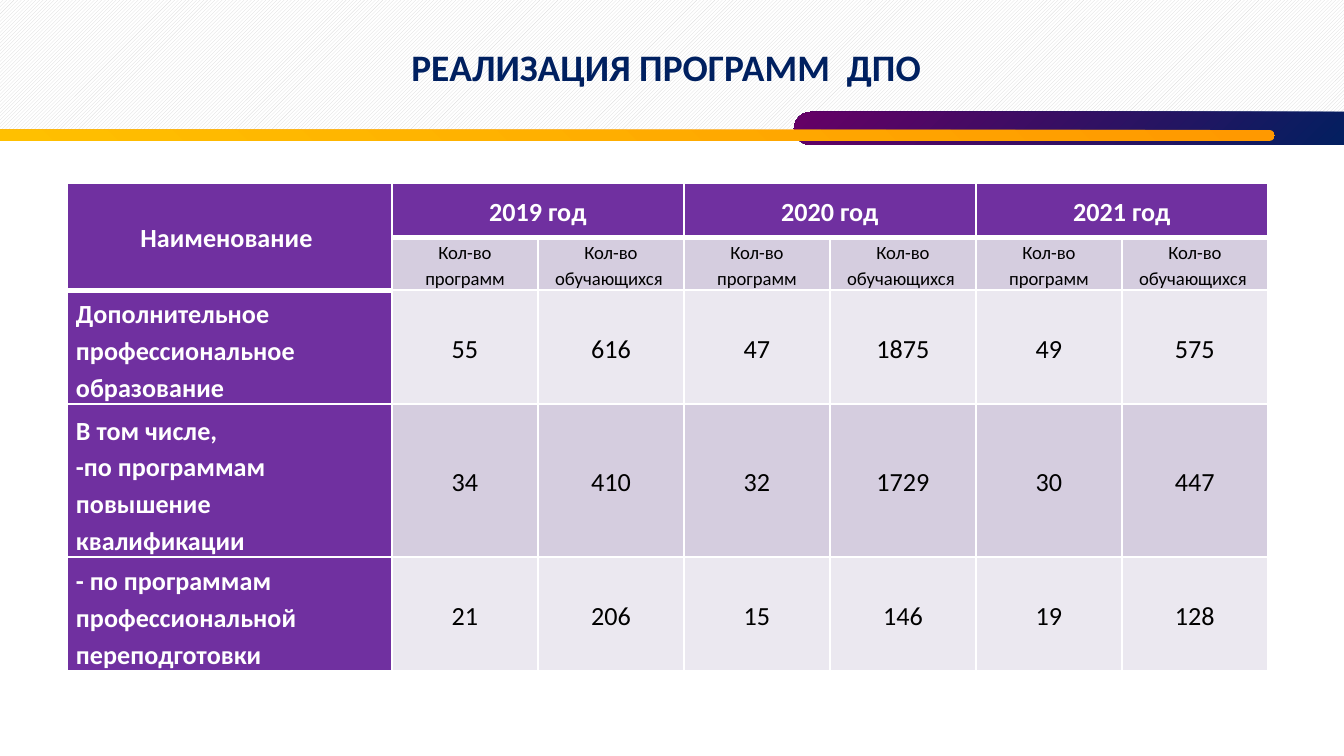
from lxml import etree
from pptx import Presentation
from pptx import util as u
from pptx.dml.color import RGBColor
from pptx.enum import dml, shapes, text
from pptx.oxml.ns import qn

W, H = 1344, 756
EMU_PER_PX = 9144000 / W

WHITE = RGBColor(0xFF, 0xFF, 0xFF)
BLACK = RGBColor(0x00, 0x00, 0x00)
HATCH = RGBColor(0xD9, 0xD9, 0xD9)
NAVY = RGBColor(0x00, 0x20, 0x60)
PLUM = RGBColor(0x66, 0x00, 0x66)
ORANGE = RGBColor(0xFF, 0x99, 0x00)
AMBER = RGBColor(0xFF, 0xC0, 0x00)
PURPLE = RGBColor(0x70, 0x30, 0xA0)
LILAC = RGBColor(0xD5, 0xCD, 0xDF)
PALE = RGBColor(0xEB, 0xE8, 0xF0)

FONT = "Calibri"
CENTER, LEFT = text.PP_ALIGN.CENTER, text.PP_ALIGN.LEFT
MIDDLE, BOTTOM = text.MSO_ANCHOR.MIDDLE, text.MSO_ANCHOR.BOTTOM

YEARS = ["2019 год", "2020 год", "2021 год"]
MEASURES = ["Кол-во программ", "Кол-во обучающихся "]
PROGRAMS = [
    (["Дополнительное профессиональное образование"],
     [55, 616, 47, 1875, 49, 575]),
    (["В том числе,", "-по программам повышение квалификации"],
     [34, 410, 32, 1729, 30, 447]),
    (["- по программам профессиональной переподготовки"],
     [21, 206, 15, 146, 19, 128]),
]
NAME_WIDTH, VALUE_WIDTH = 325, 146
ROW_HEIGHTS = [55, 51, 114, 153, 114]


def px(n):
    return u.Emu(round(n * EMU_PER_PX))


def add_run(p, words, size, color, bold):
    r = p.add_run()
    r.text = words
    r.font.name, r.font.size, r.font.bold = FONT, u.Pt(size), bold
    r.font.color.rgb = color


def add_plain_shape(s, kind, box):
    sp = s.shapes.add_shape(kind, *map(px, box))
    sp.shadow.inherit = False
    sp.line.fill.background()
    return sp


def add_bar(s, box, start, end):
    """Fully rounded bar with a diagonal gradient."""
    sp = add_plain_shape(s, shapes.MSO_SHAPE.ROUNDED_RECTANGLE, box)
    sp.adjustments[0] = 0.5
    sp.fill.gradient()
    sp.fill.gradient_angle = 315
    for stop, position, color in zip(sp.fill.gradient_stops, (0, 1), (start, end)):
        stop.position = position
        stop.color.rgb = color
    return sp


def add_header(s, box):
    x, y, w, h = box
    band = add_plain_shape(s, shapes.MSO_SHAPE.RECTANGLE, box)
    band.fill.patterned()
    band.fill.pattern = dml.MSO_PATTERN.LIGHT_UPWARD_DIAGONAL
    band.fill.fore_color.rgb = HATCH
    band.fill.back_color.rgb = WHITE

    add_bar(s, (x + 794, y + 112, 566, 33), NAVY, PLUM).rotation = 180
    stripe = add_bar(s, (x - 11, y + 130, 1286, 11), ORANGE, AMBER)
    stripe._element.spPr.xfrm.set("flipH", "1")

    title = s.shapes.title
    s.shapes._spTree.append(title._element)  # in front of the band
    title.left, title.top, title.width, title.height = map(
        px, (x + 17, y + 15, w - 37, 103))
    tf = title.text_frame
    tf.word_wrap = True
    tf.vertical_anchor = MIDDLE
    p = tf.paragraphs[0]
    p.alignment = CENTER
    add_run(p, "РЕАЛИЗАЦИЯ ПРОГРАММ  ДПО ", 20, NAVY, True)


def set_borders(cell, top, bottom):
    tc_pr = cell._tc.get_or_add_tcPr()
    for side, width in (("L", 1), ("R", 1), ("T", top), ("B", bottom)):
        ln = etree.SubElement(tc_pr, qn(f"a:ln{side}"), w=str(u.Pt(width)))
        fill = etree.SubElement(ln, qn("a:solidFill"))
        etree.SubElement(fill, qn("a:srgbClr"), val=str(WHITE))


def fill_cell(cell, lines, fill, size=14, color=BLACK, bold=False,
              align=CENTER, anchor=MIDDLE):
    cell.fill.solid()
    cell.fill.fore_color.rgb = fill
    cell.vertical_anchor = anchor
    cell.margin_left = cell.margin_right = px(9)
    cell.margin_top = cell.margin_bottom = 0
    tf = cell.text_frame
    for i, line in enumerate(lines):
        p = tf.add_paragraph() if i else tf.paragraphs[0]
        p.alignment, p.line_spacing = align, 1.15
        add_run(p, line, size, color, bold)


def add_program_table(s, x, y):
    columns = [NAME_WIDTH] + [VALUE_WIDTH] * len(YEARS) * len(MEASURES)
    table = s.shapes.add_table(
        len(ROW_HEIGHTS), len(columns), px(x), px(y),
        px(sum(columns)), px(sum(ROW_HEIGHTS))).table
    for column, width in zip(table.columns, columns):
        column.width = px(width)
    for row, height in zip(table.rows, ROW_HEIGHTS):
        row.height = px(height)

    for i in range(len(ROW_HEIGHTS)):
        for j in range(len(columns)):
            header_end = 0 if j else 1  # the name header spans two rows
            set_borders(table.cell(i, j), 3 if i == header_end + 1 else 1,
                        3 if i == header_end else 1)

    heading = dict(fill=PURPLE, color=WHITE, bold=True)
    table.cell(0, 0).merge(table.cell(1, 0))
    fill_cell(table.cell(0, 0), ["Наименование "], **heading)
    for i, year in enumerate(YEARS):
        first = 1 + i * len(MEASURES)
        table.cell(0, first).merge(table.cell(0, first + 1))
        fill_cell(table.cell(0, first), [year], **heading)
        for j, measure in enumerate(MEASURES, first):
            fill_cell(table.cell(1, j), [measure], LILAC, size=10, anchor=BOTTOM)

    for i, (name, values) in enumerate(PROGRAMS, 2):
        fill_cell(table.cell(i, 0), name, align=LEFT, anchor=BOTTOM, **heading)
        for j, value in enumerate(values, 1):
            fill_cell(table.cell(i, j), [str(value)], LILAC if i % 2 else PALE)


def main():
    prs = Presentation()
    prs.slide_width, prs.slide_height = px(W), px(H)
    s = prs.slides.add_slide(prs.slide_layouts[5])
    add_header(s, (0, 0, W, 132))
    add_program_table(s, 67, 183)
    prs.save("out.pptx")


if __name__ == "__main__":
    main()
